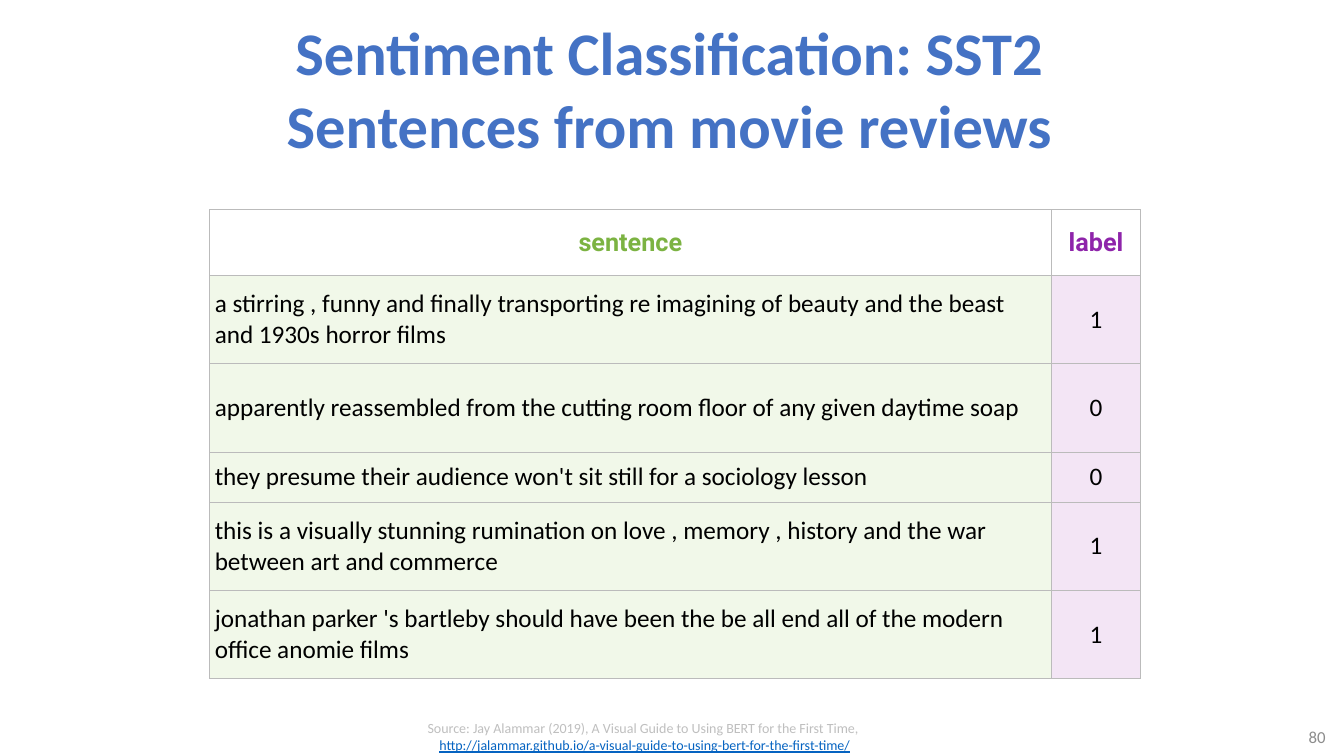
"""Build the SST2 sentiment classification slide."""
from dataclasses import dataclass

from lxml.etree import fromstring
from pptx import Presentation
from pptx.dml.color import RGBColor
from pptx.enum.text import MSO_ANCHOR, MSO_AUTO_SIZE, PP_ALIGN
from pptx.util import Pt

TITLE = ("Sentiment Classification: SST2", "Sentences from movie reviews")
HEADER = ("sentence", "label")
REVIEWS = [
    ("a stirring , funny and finally transporting re imagining of beauty "
     "and the beast and 1930s horror films", "1"),
    ("apparently reassembled from the cutting room floor of any given daytime soap", "0"),
    ("they presume their audience won't sit still for a sociology lesson", "0"),
    ("this is a visually stunning rumination on love , memory , history "
     "and the war between art and commerce", "1"),
    ("jonathan parker 's bartleby should have been the be all end all "
     "of the modern office anomie films", "1"),
]
SOURCE = "Source: Jay Alammar (2019), A Visual Guide to Using BERT for the First Time, "
URL = "http://jalammar.github.io/a-visual-guide-to-using-bert-for-the-first-time/"
PAGE = "80"

COLS = (601, 64.2)
ROWS = (46.8, 63.2, 63.2, 35.6, 63.2, 63.2)
NS = "http://schemas.openxmlformats.org/drawingml/2006/main"


@dataclass(frozen=True)
class Theme:
    """Fonts, type sizes and colours."""
    body: str = "Calibri"
    head: str = "Roboto"
    title_size: float = 43.2
    table_size: float = 18
    page_size: float = 12
    source_size: float = 10
    title: str = "4472C4"
    text: str = "000000"
    page: str = "8C8C8C"
    source: str = "BFBFBF"
    link: str = "0563C1"
    border: str = "BBBBBB"
    head_fill: str = "FFFFFF"
    head_text: tuple = ("7CB342", "8E24AA")
    fills: tuple = ("F1F8E9", "F3E5F5")


T = Theme()


def style(p, size, color, align, name=T.body, bold=False):
    """Format a whole paragraph."""
    p.alignment = align
    f = p.font
    f.size, f.name, f.bold = Pt(size), name, bold
    f.color.rgb = RGBColor.from_string(color)


def place(sp, left, top, width, height):
    """Set the position and size of a shape."""
    sp.left, sp.top, sp.width, sp.height = map(Pt, (left, top, width, height))


def add_box(s, box, anchor):
    """Add a wrapping text box and return its text frame."""
    tf = s.shapes.add_textbox(*map(Pt, box)).text_frame
    tf.word_wrap = True
    tf.vertical_anchor = anchor
    return tf


def add_borders(cell):
    """Draw a thin line on all four sides of a cell."""
    tc_pr = cell._tc.get_or_add_tcPr()
    for i, side in enumerate("LRTB"):
        tc_pr.insert(i, fromstring(
            f'<a:ln{side} xmlns:a="{NS}" w="{Pt(0.75)}"><a:solidFill>'
            f'<a:srgbClr val="{T.border}"/></a:solidFill></a:ln{side}>'))


def fill_cell(cell, text, row, col):
    """Write and format one table cell."""
    is_head = row == 0
    cell.text = text
    cell.vertical_anchor = MSO_ANCHOR.MIDDLE
    cell.margin_left = cell.margin_right = Pt(7.2 if is_head else 3.6)
    cell.margin_top = cell.margin_bottom = Pt(7.2 if is_head else 2.88)
    cell.fill.solid()
    cell.fill.fore_color.rgb = RGBColor.from_string(T.head_fill if is_head else T.fills[col])
    add_borders(cell)
    p = cell.text_frame.paragraphs[0]
    if is_head:
        style(p, T.table_size, T.head_text[col], PP_ALIGN.CENTER, T.head, True)
    else:
        style(p, T.table_size, T.text, PP_ALIGN.CENTER if col else PP_ALIGN.LEFT)


def add_reviews(s):
    """Add the table of sentences and labels."""
    frame = s.shapes.add_table(len(ROWS), len(COLS), Pt(149.8), Pt(149.8),
                               Pt(sum(COLS)), Pt(sum(ROWS)))
    table = frame.table
    table.first_row = table.horz_banding = False
    for col, width in zip(table.columns, COLS):
        col.width = Pt(width)
    for row, height in zip(table.rows, ROWS):
        row.height = Pt(height)
    for i, texts in enumerate([HEADER, *REVIEWS]):
        for j, text in enumerate(texts):
            fill_cell(table.cell(i, j), text, i, j)


def main():
    """Create and save the slide."""
    prs = Presentation()
    prs.slide_width, prs.slide_height = Pt(960), Pt(540)
    s = prs.slides.add_slide(prs.slide_layouts[5])

    title = s.shapes.title
    place(title, 150.5, 7.2, 655.2, 110.9)
    tf = title.text_frame
    tf.text = "\v".join(TITLE)
    tf.word_wrap = True
    tf.auto_size = MSO_AUTO_SIZE.NONE
    tf.vertical_anchor = MSO_ANCHOR.MIDDLE
    style(tf.paragraphs[0], T.title_size, T.title, PP_ALIGN.CENTER, bold=True)

    tf = add_box(s, (878.4, 517, 75.6, 18.7), MSO_ANCHOR.MIDDLE)
    tf.text = PAGE
    style(tf.paragraphs[0], T.page_size, T.page, PP_ALIGN.RIGHT)

    p = add_box(s, (208, 510.5, 504.7, 31.7), MSO_ANCHOR.TOP).paragraphs[0]
    style(p, T.source_size, T.source, PP_ALIGN.CENTER)
    p.add_run().text = SOURCE
    p.add_line_break()
    r = p.add_run()
    r.text = URL
    r.font.underline = True
    r.font.color.rgb = RGBColor.from_string(T.link)

    add_reviews(s)
    prs.save("out.pptx")


if __name__ == "__main__":
    main()
